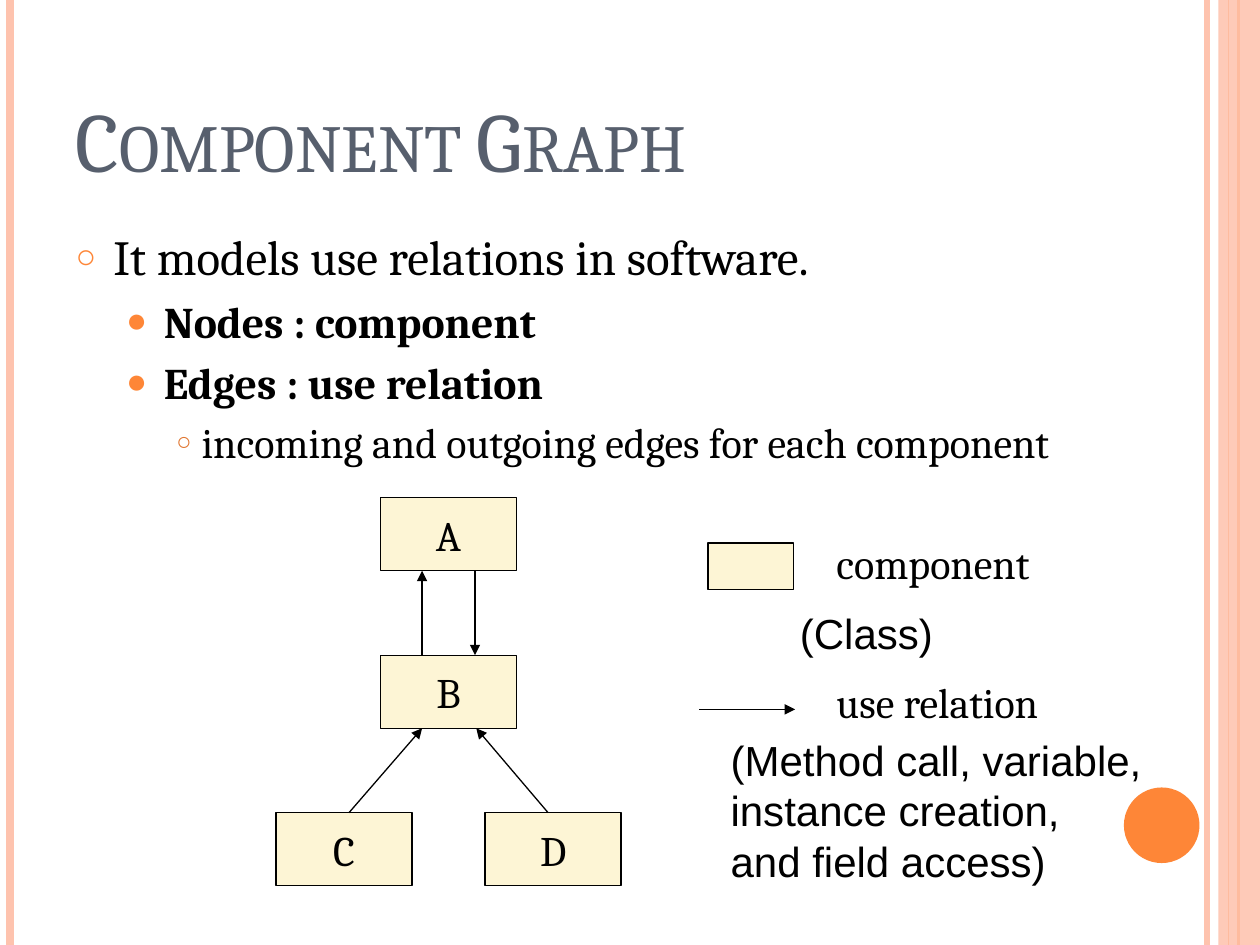
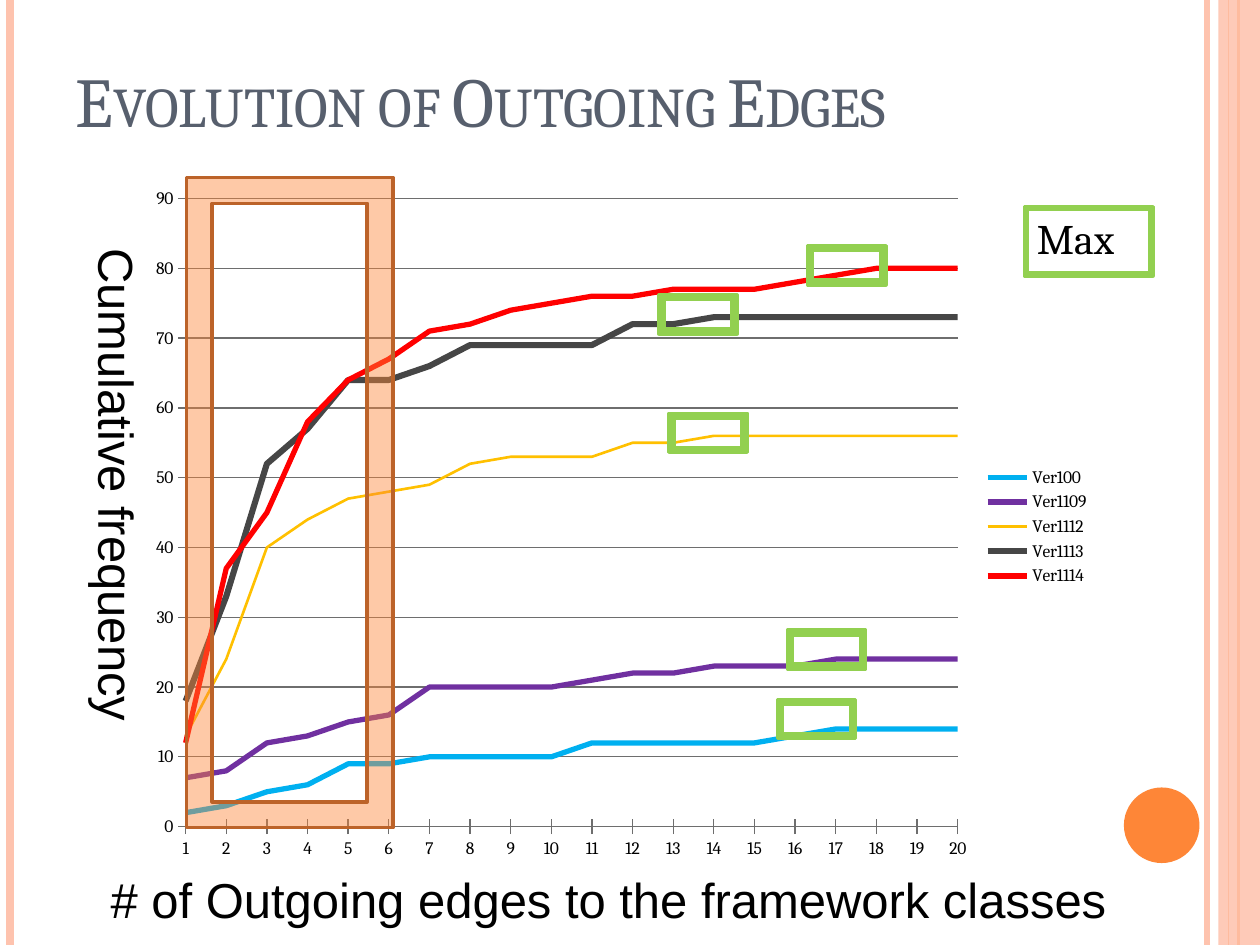
from dataclasses import dataclass

from lxml import etree
from pptx import Presentation
from pptx import util as u
from pptx.chart.data import CategoryChartData
from pptx.dml.color import RGBColor
from pptx.enum import chart as charts, shapes, text
from pptx.oxml import ns, parse_xml

WIDTH, HEIGHT = u.Inches(10), u.Inches(7.5)
COLUMNS, ROWS = 100, 75

BLACK = RGBColor(0x00, 0x00, 0x00)
SLATE = RGBColor(0x57, 0x5F, 0x6D)
ORANGE = RGBColor(0xFE, 0x86, 0x37)
DARK_ORANGE = RGBColor(0xE0, 0x75, 0x2F)
BROWN = RGBColor(0xBC, 0x63, 0x29)
PEACH = RGBColor(0xFE, 0xC3, 0xAE)
CREAM = RGBColor(0xFD, 0xF5, 0xD5)
GREEN = RGBColor(0x92, 0xD0, 0x50)
GREY = RGBColor(0x6E, 0x6E, 0x6E)
BLUE = RGBColor(0x00, 0xB0, 0xF0)
PURPLE = RGBColor(0x70, 0x30, 0xA0)
AMBER = RGBColor(0xFF, 0xC0, 0x00)
CHARCOAL = RGBColor(0x46, 0x46, 0x46)
RED = RGBColor(0xFF, 0x00, 0x00)

SERIF, SANS = "Cambria", "Arial"


@dataclass(frozen=True)
class Box:
    column: float
    row: float
    columns: float
    rows: float

    def lengths(self) -> tuple:
        return x(self.column), y(self.row), x(self.columns), y(self.rows)


@dataclass(frozen=True)
class Line:
    start: tuple
    end: tuple
    color: RGBColor = BLACK
    width: float = 0.75
    arrow: bool = True


@dataclass(frozen=True)
class Bullet:
    words: str
    level: int
    size: float
    bold: bool
    margin: float
    hanging: float
    sign: str
    color: RGBColor
    percent: int


@dataclass(frozen=True)
class Label:
    words: tuple
    box: Box
    font: str = SERIF
    size: float = 24
    vertical: bool = False


@dataclass(frozen=True)
class Version:
    name: str
    values: tuple
    color: RGBColor
    width: float = 3


BANDS = [
    Line((column, 0), (column, ROWS), color, width, False)
    for column, color, width in (
        (95.8, PEACH, 3), (0.8, PEACH, 4.5), (98.3, ORANGE, 1.5), (97.5, ORANGE, 0.75))
]
SIDE_BAND = Box(96.7, 0, 3.3, ROWS)
DISC = Box(89.2, 62.5, 6, 6)

BULLETS = [
    Bullet("It models use relations in software.", 0, 28, False, 3, 3, "○", ORANGE, 70),
    Bullet("Nodes : component", 1, 25, True, 7, 3, "●", ORANGE, 80),
    Bullet("Edges : use relation", 1, 25, True, 7, 3, "●", ORANGE, 80),
    Bullet("incoming and outgoing edges for each component", 2, 24, False, 10, 2, "○",
           DARK_ORANGE, 60),
]

NODE_COLUMNS, NODE_ROWS = 10.8, 5.8
TIERS = [39.5 + 12.5 * tier for tier in range(3)]
NODES = {"A": (30.2, TIERS[0]), "B": (30.2, TIERS[1]),
         "C": (21.9, TIERS[2]), "D": (38.5, TIERS[2])}
UNDER = [tier + NODE_ROWS for tier in TIERS]
ARROWS = [
    Line((33.5, TIERS[1]), (33.5, UNDER[0])),
    Line((37.7, UNDER[0]), (37.7, TIERS[1])),
    Line((27.7, TIERS[2]), (33.5, UNDER[1])),
    Line((43.5, TIERS[2]), (37.8, UNDER[1])),
    Line((55.5, 56.3), (63.1, 56.3)),
]
KEY_BOX = Box(56.2, 43.1, 6.8, 3.7)
KEY_LABELS = [
    Label(("component",), Box(65.4, 42.2, 18.5, 5)),
    Label(("use relation",), Box(65.4, 53.2, 19.3, 5)),
    Label(("(Class)",), Box(62.5, 47.7, 25.8, 5), SANS),
    Label(("(Method call, variable, instance creation,", "and field access)"),
          Box(57, 57.8, 35.2, 13.1), SANS),
]

VERSIONS = [
    Version("Ver100", (2, 3, 5, 6, 9, 9, 10, 10, 10, 10, 12, 12, 12, 12, 12, 13, 14, 14, 14, 14),
            BLUE),
    Version("Ver1109", (7, 8, 12, 13, 15, 16, 20, 20, 20, 20, 21, 22, 22, 23, 23, 23, 24, 24,
                        24, 24), PURPLE),
    Version("Ver1112", (13, 24, 40, 44, 47, 48, 49, 52, 53, 53, 53, 55, 55, 56, 56, 56, 56, 56,
                        56, 56), AMBER, 1.5),
    Version("Ver1113", (18, 33, 52, 57, 64, 64, 66, 69, 69, 69, 69, 72, 72, 73, 73, 73, 73, 73,
                        73, 73), CHARCOAL, 3.5),
    Version("Ver1114", (12, 37, 45, 58, 64, 67, 71, 72, 74, 75, 76, 76, 77, 77, 77, 78, 79, 80,
                        80, 80), RED),
]
CHART_BOX = Box(10.9, 14.1, 76.6, 55.4)
PLOT_SHARES = {"x": 0.05, "y": 0.03, "w": 0.8, "h": 0.9}
EARLY_RANGE = Box(14.8, 14.1, 16.4, 51.6)
MAX_FRAME = Box(81.3, 16.4, 10.2, 5.5)
MAX_MARKS = [Box(column, row, 6.2, 3.1) for column, row in (
    (64.1, 19.5), (52.3, 23.4), (53.1, 32.8), (62.5, 50), (61.7, 55.5))]
CHART_LABELS = [
    Label(("Max",), Box(81.3, 16.4, 14.8, 5.1)),
    Label(("Cumulative frequency",), Box(5.5, 18.7, 6.7, 43.8), SANS, 28, True),
    Label(("# of Outgoing edges to the framework classes",), Box(7.8, 68.5, 96.1, 5.7), SANS, 28),
]


def x(columns: float) -> int:
    return round(WIDTH * columns / COLUMNS)


def y(rows: float) -> int:
    return round(HEIGHT * rows / ROWS)


def apply(target, **values) -> None:
    for name, value in values.items():
        setattr(target, name, value)


def style_font(font, name: str, size: float, color: RGBColor = BLACK, bold: bool = False) -> None:
    apply(font, name=name, size=u.Pt(size), bold=bold)
    font.color.rgb = color


def style_line(line, color: RGBColor, width: float) -> None:
    line.color.rgb = color
    line.width = u.Pt(width)


def add_line(slide, line: Line) -> None:
    connector = slide.shapes.add_connector(
        shapes.MSO_CONNECTOR.STRAIGHT, x(line.start[0]), y(line.start[1]),
        x(line.end[0]), y(line.end[1]))
    style_line(connector.line, line.color, line.width)
    properties = connector._element.spPr
    if line.arrow:
        etree.SubElement(properties.find(ns.qn("a:ln")), ns.qn("a:tailEnd"), type="triangle")
    etree.SubElement(properties, ns.qn("a:effectLst"))


def add_shape(slide, kind, box: Box, fill: RGBColor, outline: RGBColor | None = None,
              width: float = 0.75, opacity: int = 100):
    shape = slide.shapes.add_shape(kind, *box.lengths())
    shape.shadow.inherit = False
    shape.fill.solid()
    shape.fill.fore_color.rgb = fill
    if opacity < 100:
        color = shape._element.spPr.find(ns.qn("a:solidFill"))[0]
        etree.SubElement(color, ns.qn("a:alpha"), val=str(opacity * 1000))
    if outline is None:
        shape.line.fill.background()
    else:
        style_line(shape.line, outline, width)
    return shape


def add_label(slide, label: Label) -> None:
    frame = slide.shapes.add_textbox(*label.box.lengths()).text_frame
    frame.word_wrap = True
    if label.vertical:
        frame._txBody.bodyPr.set("vert", "eaVert")
    frame.text = "\n".join(label.words)
    for paragraph in frame.paragraphs:
        style_font(paragraph.runs[0].font, label.font, label.size)


def add_slide(presentation, layout: int, title: str, box: Box, size: float):
    slide = presentation.slides.add_slide(presentation.slide_layouts[layout])
    for band in BANDS:
        add_line(slide, band)
    add_shape(slide, shapes.MSO_SHAPE.RECTANGLE, SIDE_BAND, PEACH, opacity=87)
    add_shape(slide, shapes.MSO_SHAPE.OVAL, DISC, ORANGE)
    heading = slide.shapes.title
    place(heading, box)
    frame = heading.text_frame
    frame.text = title
    apply(frame, vertical_anchor=text.MSO_ANCHOR.BOTTOM, auto_size=text.MSO_AUTO_SIZE.NONE)
    paragraph = frame.paragraphs[0]
    paragraph.alignment = text.PP_ALIGN.LEFT
    font = paragraph.runs[0].font
    style_font(font, SERIF, size, SLATE)
    font._element.set("cap", "small")
    return slide


def place(shape, box: Box) -> None:
    apply(shape, **dict(zip(("left", "top", "width", "height"), box.lengths())))


def fill_body(body, bullets: list[Bullet]) -> None:
    frame = body.text_frame
    frame.text = "\n".join(bullet.words for bullet in bullets)
    frame.auto_size = text.MSO_AUTO_SIZE.NONE
    for paragraph, bullet in zip(frame.paragraphs, bullets):
        paragraph.level = bullet.level
        style_font(paragraph.runs[0].font, SERIF, bullet.size, bold=bullet.bold)
        properties = paragraph._p.get_or_add_pPr()
        properties.set("marL", str(x(bullet.margin)))
        properties.set("indent", str(-x(bullet.hanging)))
        color = etree.SubElement(properties, ns.qn("a:buClr"))
        etree.SubElement(color, ns.qn("a:srgbClr"), val=str(bullet.color))
        etree.SubElement(properties, ns.qn("a:buSzPct"), val=str(bullet.percent * 1000))
        etree.SubElement(properties, ns.qn("a:buFont"), typeface=SANS)
        etree.SubElement(properties, ns.qn("a:buChar"), char=bullet.sign)
    frame.paragraphs[0].space_before = u.Pt(6)


def add_frequency_chart(slide) -> None:
    data = CategoryChartData()
    data.categories = [str(edges) for edges in range(1, 21)]
    for version in VERSIONS:
        data.add_series(version.name, version.values)
    chart = slide.shapes.add_chart(
        charts.XL_CHART_TYPE.LINE, *CHART_BOX.lengths(), data).chart
    style_font(chart.font, SERIF, 10)
    apply(chart, has_title=False, has_legend=True)
    apply(chart.legend, position=charts.XL_LEGEND_POSITION.RIGHT, include_in_layout=False)
    plot = chart.plots[0]
    plot.vary_by_categories = False
    for series, version in zip(plot.series, VERSIONS):
        series.smooth = False
        series.marker.style = charts.XL_MARKER_STYLE.NONE
        style_line(series.format.line, version.color, version.width)
    for axis in (chart.category_axis, chart.value_axis):
        axis.major_tick_mark = charts.XL_TICK_MARK.CROSS
        style_line(axis.format.line, GREY, 0.75)
    value_axis = chart.value_axis
    apply(value_axis, minimum_scale=0, maximum_scale=90, major_unit=10, has_major_gridlines=True)
    style_line(value_axis.major_gridlines.format.line, GREY, 0.75)
    crossing = parse_xml(f'<c:crossBetween {ns.nsdecls("c")} val="midCat"/>')
    value_axis._element.find(ns.qn("c:majorUnit")).addprevious(crossing)
    set_plot_layout(chart)


def set_plot_layout(chart) -> None:
    settings = {"layoutTarget": "inner", "xMode": "edge", "yMode": "edge", **PLOT_SHARES}
    entries = "".join(f'<c:{name} val="{value}"/>' for name, value in settings.items())
    layout = parse_xml(f'<c:layout {ns.nsdecls("c")}><c:manualLayout>{entries}'
                       "</c:manualLayout></c:layout>")
    area = chart._chartSpace.chart.plotArea
    for previous in area.findall(ns.qn("c:layout")):
        area.remove(previous)
    area.insert(0, layout)


def build_component_graph(presentation) -> None:
    slide = add_slide(presentation, 1, "Component Graph", Box(5, 3, 81.7, 12.5), 48)
    body = slide.placeholders[1]
    place(body, Box(5, 17.5, 90.3, 53.3))
    fill_body(body, BULLETS)
    for name, corner in NODES.items():
        node = add_shape(slide, shapes.MSO_SHAPE.RECTANGLE,
                         Box(*corner, NODE_COLUMNS, NODE_ROWS), CREAM, BLACK)
        node.text_frame.text = name
        node.text_frame.vertical_anchor = text.MSO_ANCHOR.MIDDLE
        paragraph = node.text_frame.paragraphs[0]
        paragraph.alignment = text.PP_ALIGN.CENTER
        style_font(paragraph.runs[0].font, SERIF, 24)
    add_shape(slide, shapes.MSO_SHAPE.RECTANGLE, KEY_BOX, CREAM, BLACK)
    for arrow in ARROWS:
        add_line(slide, arrow)
    for label in KEY_LABELS:
        add_label(slide, label)


def build_edge_evolution(presentation) -> None:
    slide = add_slide(presentation, 5, "Evolution of Outgoing Edges", Box(5, 2.3, 87.2, 9.4), 40)
    add_frequency_chart(slide)
    add_shape(slide, shapes.MSO_SHAPE.FRAME, EARLY_RANGE, ORANGE, BROWN, 2, 44)
    for mark in MAX_MARKS:
        add_shape(slide, shapes.MSO_SHAPE.FRAME, mark, GREEN, GREEN, 2)
    add_shape(slide, shapes.MSO_SHAPE.FRAME, MAX_FRAME, GREEN, GREEN, 2).adjustments[0] = 0.04
    for label in CHART_LABELS:
        add_label(slide, label)


def main() -> None:
    presentation = Presentation()
    apply(presentation, slide_width=WIDTH, slide_height=HEIGHT)
    build_component_graph(presentation)
    build_edge_evolution(presentation)
    presentation.save("out.pptx")


if __name__ == "__main__":
    main()
